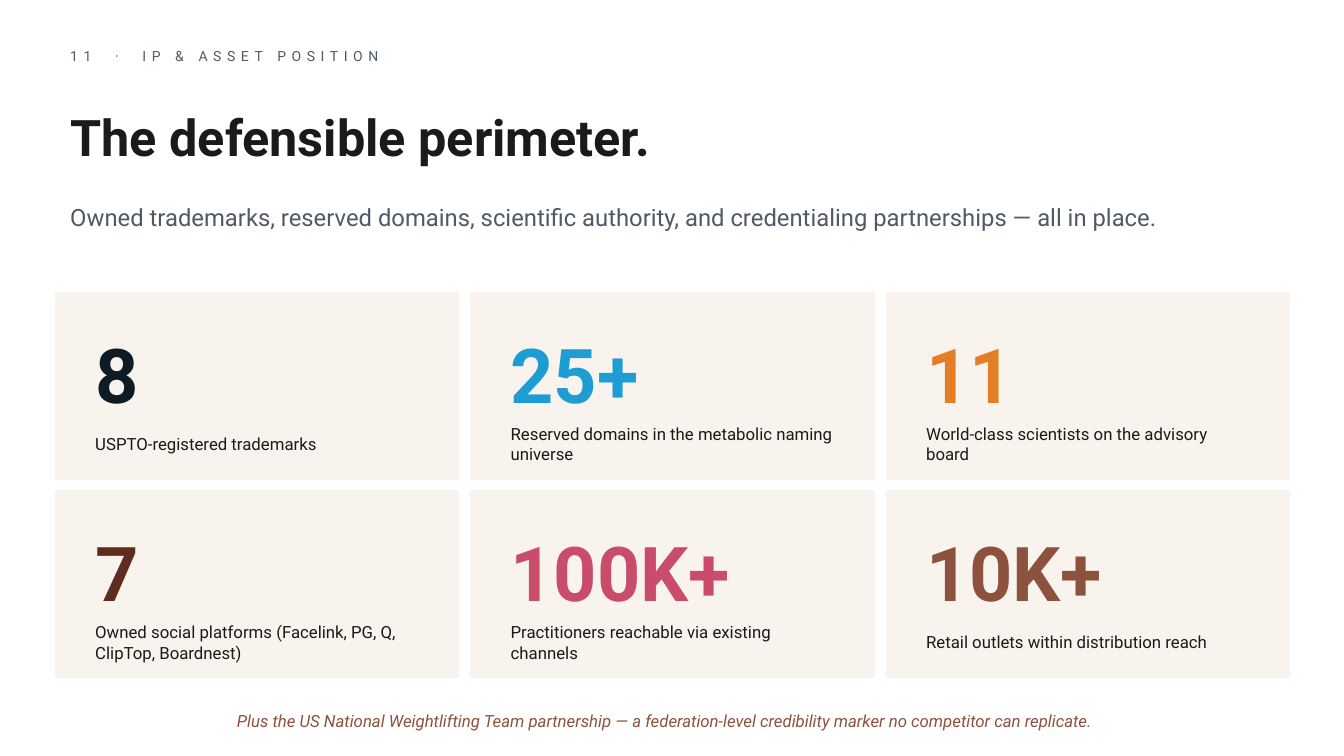
from pptx import Presentation
from pptx.dml.color import RGBColor
from pptx.enum.shapes import MSO_SHAPE
from pptx.enum.text import MSO_ANCHOR, MSO_AUTO_SIZE, PP_ALIGN
from pptx.util import Cm, Pt

INK = RGBColor(0x1A, 0x1A, 0x1A)
SLATE = RGBColor(0x4F, 0x5A, 0x66)
CREAM = RGBColor(0xF8, 0xF4, 0xED)
NAVY = RGBColor(0x0E, 0x1A, 0x24)
BLUE = RGBColor(0x1D, 0x9D, 0xD4)
ORANGE = RGBColor(0xE4, 0x7E, 0x26)
MAROON = RGBColor(0x5F, 0x2D, 0x1F)
ROSE = RGBColor(0xC9, 0x4C, 0x6A)
BROWN = RGBColor(0x8D, 0x52, 0x3E)

MARGIN, TEXT_WIDTH = Cm(1.52), Cm(30.48)
CARD_LEFT, CARD_TOP = Cm(1.4), Cm(7.37)
CARD_WIDTH, CARD_HEIGHT = Cm(10.16), Cm(4.7)
COLUMN_STEP, ROW_STEP = Cm(10.47), Cm(5)
CARD_INDENT, CARD_TEXT_WIDTH = Cm(0.75), Cm(8.64)
COLUMNS = 3

ASSETS = [
    ("8", "USPTO-registered trademarks", NAVY),
    ("25+", "Reserved domains in the metabolic naming universe", BLUE),
    ("11", "World-class scientists on the advisory board", ORANGE),
    ("7", "Owned social platforms (Facelink, PG, Q, ClipTop, Boardnest)", MAROON),
    ("100K+", "Practitioners reachable via existing channels", ROSE),
    ("10K+", "Retail outlets within distribution reach", BROWN),
]


def write(shape, text, size, color, bold=False, italic=False, align=PP_ALIGN.LEFT):
    """Fill a shape with one vertically centred paragraph and return its run."""
    frame = shape.text_frame
    frame.text = text
    frame.word_wrap = True
    frame.auto_size = MSO_AUTO_SIZE.NONE
    frame.vertical_anchor = MSO_ANCHOR.MIDDLE
    paragraph = frame.paragraphs[0]
    paragraph.alignment = align
    run = paragraph.runs[0]
    run.font.name = "Roboto"
    run.font.size = Pt(size)
    run.font.bold = bold
    run.font.italic = italic
    run.font.color.rgb = color
    return run


presentation = Presentation()
presentation.slide_width = Cm(33.87)
presentation.slide_height = Cm(19.05)
slide = presentation.slides.add_slide(presentation.slide_layouts[5])
shapes = slide.shapes

section = shapes.add_textbox(MARGIN, Cm(1.02), TEXT_WIDTH, Cm(0.76))
section_run = write(section, "11  ·  IP & ASSET POSITION", 10, SLATE)
section_run.font._element.set("spc", "400")

title = shapes.title
title.left, title.top, title.width, title.height = MARGIN, Cm(2.16), TEXT_WIDTH, Cm(2.54)
write(title, "The defensible perimeter.", 36, INK, bold=True)

summary = shapes.add_textbox(MARGIN, Cm(4.83), TEXT_WIDTH, Cm(1.27))
write(summary, "Owned trademarks, reserved domains, scientific authority, "
      "and credentialing partnerships — all in place.", 17, SLATE)

for index, (figure, caption, color) in enumerate(ASSETS):
    row, column = divmod(index, COLUMNS)
    left = CARD_LEFT + column * COLUMN_STEP
    top = CARD_TOP + row * ROW_STEP

    card = shapes.add_shape(MSO_SHAPE.RECTANGLE, left, top, CARD_WIDTH, CARD_HEIGHT)
    card.shadow.inherit = False
    card.fill.solid()
    card.fill.fore_color.rgb = CREAM
    card.line.color.rgb = CREAM
    card.line.width = Pt(1)

    text_left = left + CARD_INDENT
    figure_box = shapes.add_textbox(text_left, top + Cm(0.64), CARD_TEXT_WIDTH, Cm(2.79))
    write(figure_box, figure, 54, color, bold=True)
    caption_box = shapes.add_textbox(text_left, top + Cm(3.18), CARD_TEXT_WIDTH, Cm(1.27))
    write(caption_box, caption, 12, INK)

partnership = shapes.add_textbox(MARGIN, Cm(17.65), TEXT_WIDTH, Cm(1.02))
write(partnership, "Plus the US National Weightlifting Team partnership — a federation-level "
      "credibility marker no competitor can replicate.",
      12, BROWN, italic=True, align=PP_ALIGN.CENTER)

presentation.save("out.pptx")
